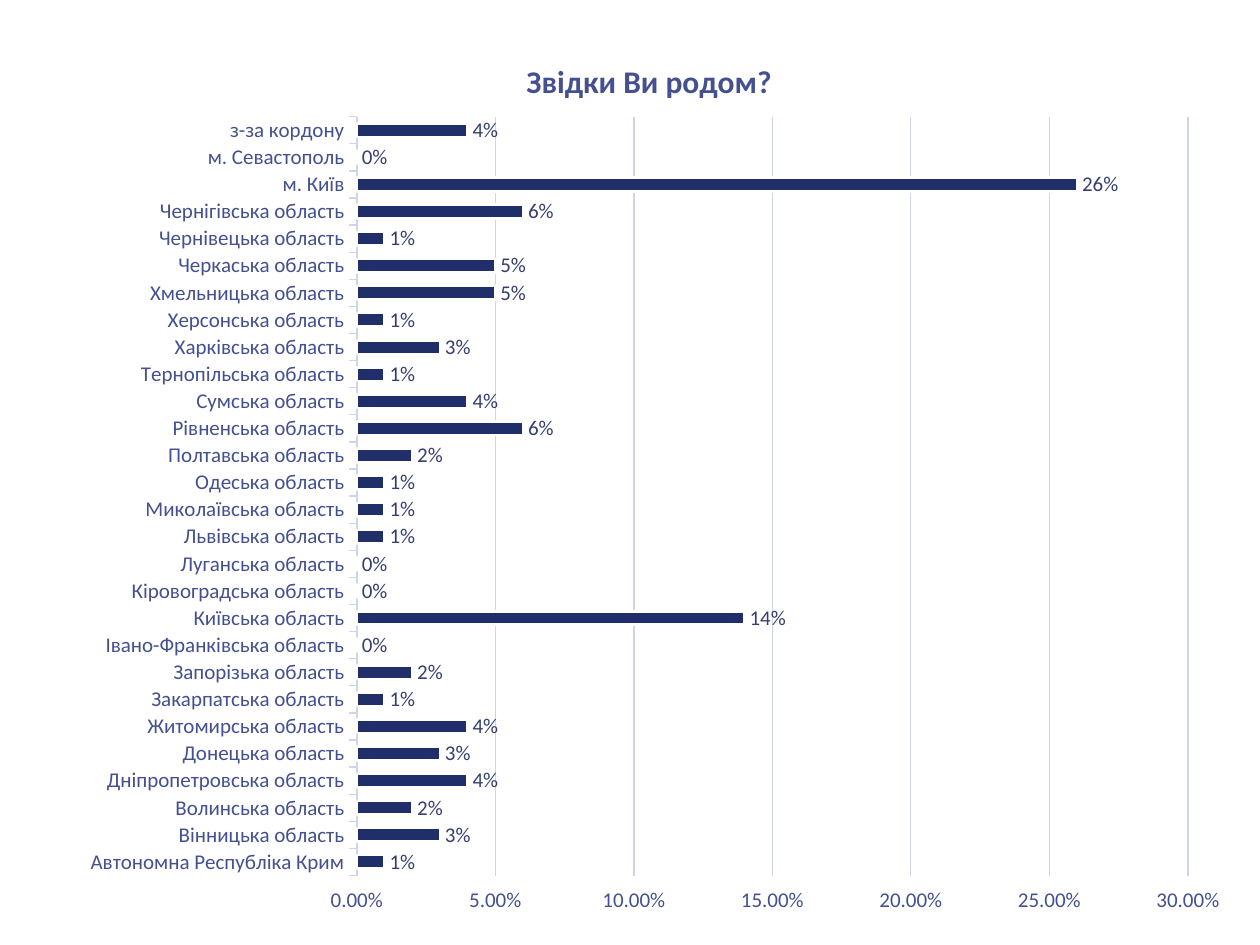
from dataclasses import dataclass
from typing import NamedTuple

from lxml import etree
from pptx import Presentation
from pptx.chart.data import CategoryChartData
from pptx.dml.color import RGBColor
from pptx.enum.chart import XL_CHART_TYPE, XL_LABEL_POSITION, XL_TICK_MARK
from pptx.oxml.ns import qn
from pptx.util import Inches, Pt

BAR_CLUSTERED = XL_CHART_TYPE.BAR_CLUSTERED
OUTSIDE_END = XL_LABEL_POSITION.OUTSIDE_END
TICK_OUTSIDE = XL_TICK_MARK.OUTSIDE
TICK_NONE = XL_TICK_MARK.NONE
BLANK_LAYOUT = 6


@dataclass(frozen=True)
class Theme:
    font: str = "Calibri"
    axis_text: str = "44508F"
    label_text: str = "353F70"
    base_text: str = "101322"
    grid: str = "D0D4E9"
    bar: str = "202F6A"
    bar_outline: str = "FFFFFF"
    base_size: float = 10
    text_size: float = 12
    title_size: float = 18
    grid_width: float = 0.75
    outline_width: float = 1.5


class Region(NamedTuple):
    name: str
    share: float


THEME = Theme()
TITLE = "Звідки Ви родом?"
REGIONS = [
    Region("Автономна Республіка Крим", 0.01),
    Region("Вінницька область", 0.03),
    Region("Волинська область", 0.02),
    Region("Дніпропетровська область", 0.04),
    Region("Донецька область", 0.03),
    Region("Житомирська область", 0.04),
    Region("Закарпатська область", 0.01),
    Region("Запорізька область", 0.02),
    Region("Івано-Франківська область", 0),
    Region("Київська область", 0.14),
    Region("Кіровоградська область", 0),
    Region("Луганська область", 0),
    Region("Львівська область", 0.01),
    Region("Миколаївська область", 0.01),
    Region("Одеська область", 0.01),
    Region("Полтавська область", 0.02),
    Region("Рівненська область", 0.06),
    Region("Сумська область", 0.04),
    Region("Тернопільська область", 0.01),
    Region("Харківська область", 0.03),
    Region("Херсонська область", 0.01),
    Region("Хмельницька область", 0.05),
    Region("Черкаська область", 0.05),
    Region("Чернівецька область", 0.01),
    Region("Чернігівська область", 0.06),
    Region("м. Київ", 0.26),
    Region("м. Севастополь", 0),
    Region("з-за кордону", 0.04),
]


def style_font(font, *, size: float, color: str, bold: bool = False) -> None:
    font.name = THEME.font
    font.size = Pt(size)
    font.bold = bold
    font.color.rgb = RGBColor.from_string(color)


def style_line(line, *, color: str, width: float) -> None:
    line.color.rgb = RGBColor.from_string(color)
    line.width = Pt(width)


def place(element, index: int, **settings) -> None:
    """Give a chart part a manual layout, in fractions of the chart."""
    for old_layout in element.findall(qn("c:layout")):
        element.remove(old_layout)
    layout = etree.Element(qn("c:layout"))
    manual = etree.SubElement(layout, qn("c:manualLayout"))
    for name, value in settings.items():
        etree.SubElement(manual, qn(f"c:{name}")).set("val", str(value))
    element.insert(index, layout)


def add_title(chart, text: str) -> None:
    chart.has_title = True
    title = chart.chart_title
    title.include_in_layout = False
    run = title.text_frame.paragraphs[0].add_run()
    run.text = text
    style_font(run.font, size=THEME.title_size, color=THEME.axis_text, bold=True)
    place(title._element, 1, xMode="edge", yMode="edge", x=0.39, y=0.03)


def style_axes(chart) -> None:
    category_axis, value_axis = chart.category_axis, chart.value_axis
    for axis in (category_axis, value_axis):
        style_font(axis.tick_labels.font, size=THEME.text_size, color=THEME.axis_text)
        axis.major_tick_mark = TICK_OUTSIDE
        axis.minor_tick_mark = TICK_NONE
    category_axis.has_major_gridlines = False
    value_axis.has_major_gridlines = True
    for line in (category_axis.format.line, value_axis.major_gridlines.format.line):
        style_line(line, color=THEME.grid, width=THEME.grid_width)
    value_axis.format.line.fill.background()
    value_axis.minimum_scale = 0
    value_axis.maximum_scale = 0.3
    value_axis.major_unit = 0.05
    value_axis.tick_labels.number_format = "0.00%"
    value_axis.tick_labels.number_format_is_linked = False


def style_bars(plot) -> None:
    plot.gap_width = 100
    plot.vary_by_categories = False
    bars = plot.series[0]
    bars.invert_if_negative = False
    bars.format.fill.solid()
    bars.format.fill.fore_color.rgb = RGBColor.from_string(THEME.bar)
    style_line(bars.format.line, color=THEME.bar_outline, width=THEME.outline_width)
    labels = bars.data_labels
    labels.show_value = True
    labels.position = OUTSIDE_END
    labels.number_format = "0%"
    labels.number_format_is_linked = False
    style_font(labels.font, size=THEME.text_size, color=THEME.label_text)


def add_origin_chart(slide) -> None:
    data = CategoryChartData(number_format="0%")
    data.categories = [region.name for region in REGIONS]
    data.add_series("Series 1", [region.share for region in REGIONS])
    chart = slide.shapes.add_chart(
        BAR_CLUSTERED, Inches(0.51), Inches(0.21), Inches(9.29), Inches(7.17), data
    ).chart
    chart.has_legend = False
    style_font(chart.font, size=THEME.base_size, color=THEME.base_text)
    add_title(chart, TITLE)
    style_axes(chart)
    style_bars(chart.plots[0])
    plot_area = chart._chartSpace.find(f".//{qn('c:plotArea')}")
    place(plot_area, 0, layoutTarget="inner", xMode="edge", yMode="edge",
          x=0.25, y=0.1, w=0.71, h=0.84)


def main() -> None:
    presentation = Presentation()
    presentation.slide_width = Inches(10)
    presentation.slide_height = Inches(7.5)
    slide = presentation.slides.add_slide(presentation.slide_layouts[BLANK_LAYOUT])
    add_origin_chart(slide)
    presentation.save("out.pptx")


if __name__ == "__main__":
    main()
